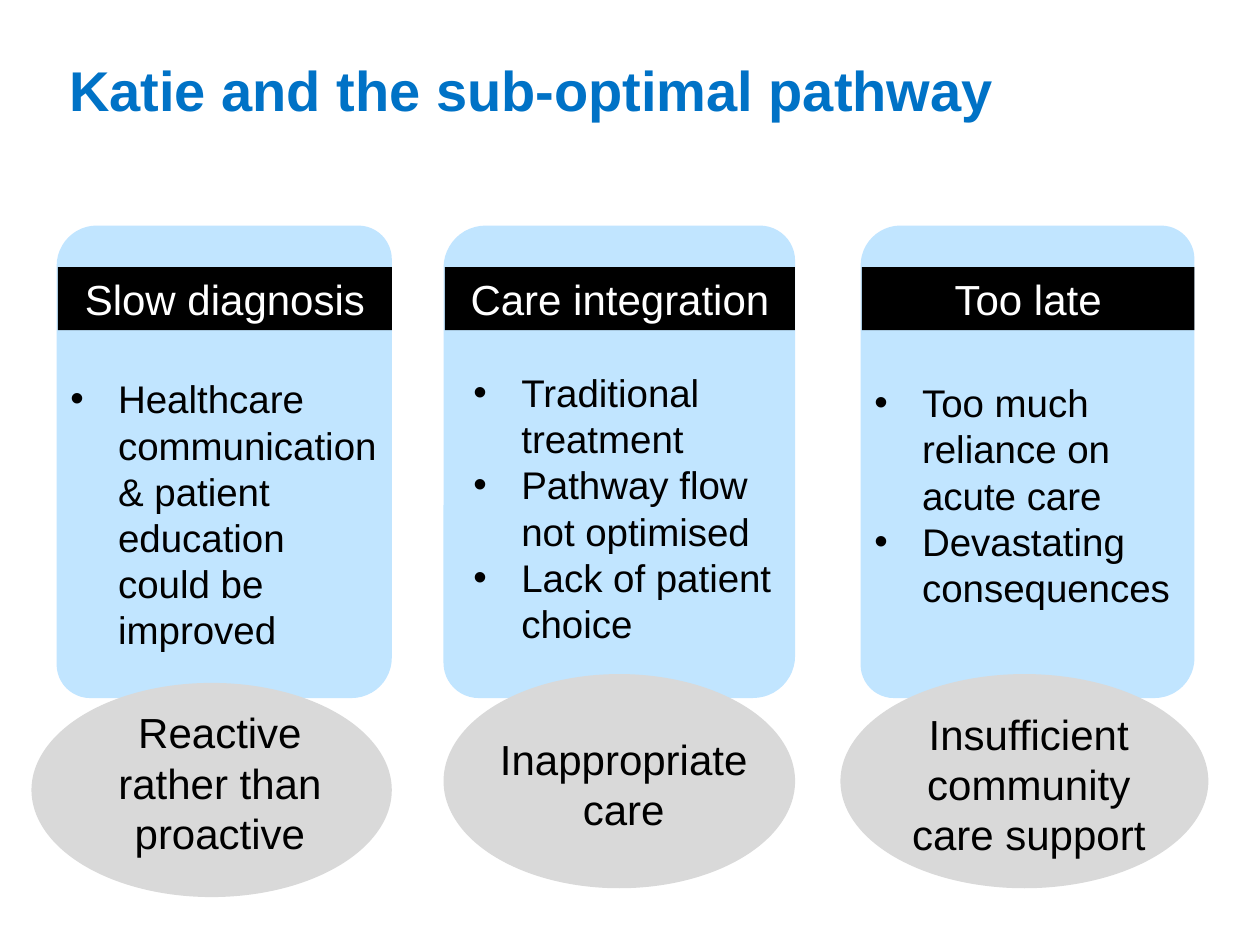
"""Build the slide on the sub-optimal pathway: three columns of problems."""
from lxml import etree
from pptx import Presentation
from pptx.dml.color import RGBColor
from pptx.enum.shapes import MSO_SHAPE
from pptx.enum.text import MSO_ANCHOR, PP_ALIGN
from pptx.oxml.ns import qn
from pptx.util import Inches, Pt

CARD, BAR, OVAL = MSO_SHAPE.ROUND_2_DIAG_RECTANGLE, MSO_SHAPE.RECTANGLE, MSO_SHAPE.OVAL
LEFT, CENTER = PP_ALIGN.LEFT, PP_ALIGN.CENTER
TOP, MIDDLE = MSO_ANCHOR.TOP, MSO_ANCHOR.MIDDLE
FONT, INDENT = "Arial", Inches(0.38)
BLUE, PALE, GREY, BLACK, WHITE = "0072C6", "C1E5FF", "D9D9D9", "000000", "FFFFFF"

TITLE = "Katie and the sub-optimal pathway"
COLUMNS = [
    {"x": 0.45, "w": 2.66, "head": "Slow diagnosis",
     "points": ["Healthcare communication & patient education could be improved"],
     "list": (0.46, 2.93, 2.66, 2.32),
     "oval": (0.25, 5.42, 2.86, 1.7),
     "note": "Reactive rather than proactive", "label": (0.55, 5.56, 2.39, 1.31)},
    {"x": 3.52, "w": 2.79, "head": "Care integration",
     "points": ["Traditional treatment", "Pathway flow not optimised",
                "Lack of patient choice"],
     "list": (3.66, 2.88, 2.64, 2.32),
     "oval": (3.52, 5.35, 2.79, 1.7),
     "note": "Inappropriate care", "label": (3.79, 5.77, 2.32, 0.91)},
    {"x": 6.83, "w": 2.65, "head": "Too late",
     "points": ["Too much reliance on acute care", "Devastating consequences"],
     "list": (6.84, 2.96, 2.62, 1.95),
     "oval": (6.67, 5.35, 2.92, 1.7),
     "note": "Insufficient community care support", "label": (6.95, 5.57, 2.43, 1.31)},
]


def rgb(code):
    return RGBColor.from_string(code)


def add_form(slide, kind, area, fill):
    form = slide.shapes.add_shape(kind, *map(Inches, area))
    form.shadow.inherit = False
    form.fill.solid()
    form.fill.fore_color.rgb = rgb(fill)
    form.line.fill.background()
    return form


def add_box(slide, area):
    return slide.shapes.add_textbox(*map(Inches, area))


def add_bullet(para):
    props = para._p.get_or_add_pPr()
    props.set("marL", str(INDENT))
    props.set("indent", str(-INDENT))
    etree.SubElement(props, qn("a:buFont")).set("typeface", FONT)
    etree.SubElement(props, qn("a:buChar")).set("char", "•")


def write(shape, lines, size, color=BLACK, align=CENTER, anchor=TOP, bold=False, bullet=False):
    frame = shape.text_frame
    frame.word_wrap = True
    frame.vertical_anchor = anchor
    for i, line in enumerate(lines):
        para = frame.add_paragraph() if i else frame.paragraphs[0]
        para.alignment = align
        if bullet:
            add_bullet(para)
        run = para.add_run()
        run.text = line
        run.font.name, run.font.size, run.font.bold = FONT, Pt(size), bold
        run.font.color.rgb = rgb(color)


def add_column(slide, col):
    x, w = col["x"], col["w"]
    card = add_form(slide, CARD, (x, 1.79, w, 3.75), PALE)
    card.adjustments[0], card.adjustments[1] = 0.12, 0.1
    bar = add_form(slide, BAR, (x + 0.01, 2.12, w - 0.01, 0.5), BLACK)
    write(bar, [col["head"]], 24, WHITE, anchor=MIDDLE)
    write(add_box(slide, col["list"]), col["points"], 22, align=LEFT, bullet=True)
    add_form(slide, OVAL, col["oval"], GREY)
    write(add_box(slide, col["label"]), [col["note"]], 24)


def main():
    deck = Presentation()
    deck.slide_width, deck.slide_height = Inches(10), Inches(7.5)
    slide = deck.slides.add_slide(deck.slide_layouts[6])
    title = add_box(slide, (0.45, 0.34, 8.05, 0.73))
    write(title, [TITLE], 32, BLUE, LEFT, MIDDLE, bold=True)
    for col in COLUMNS:
        add_column(slide, col)
    deck.save("out.pptx")


if __name__ == "__main__":
    main()
